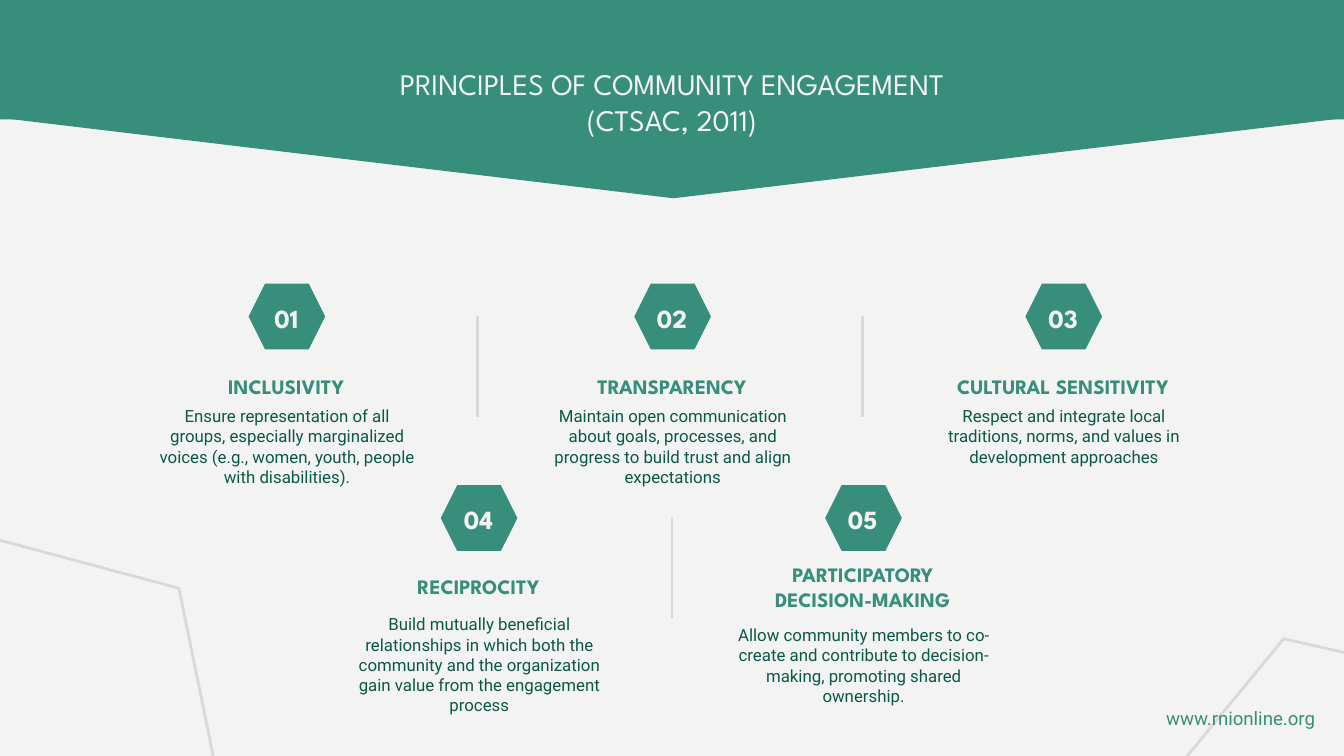
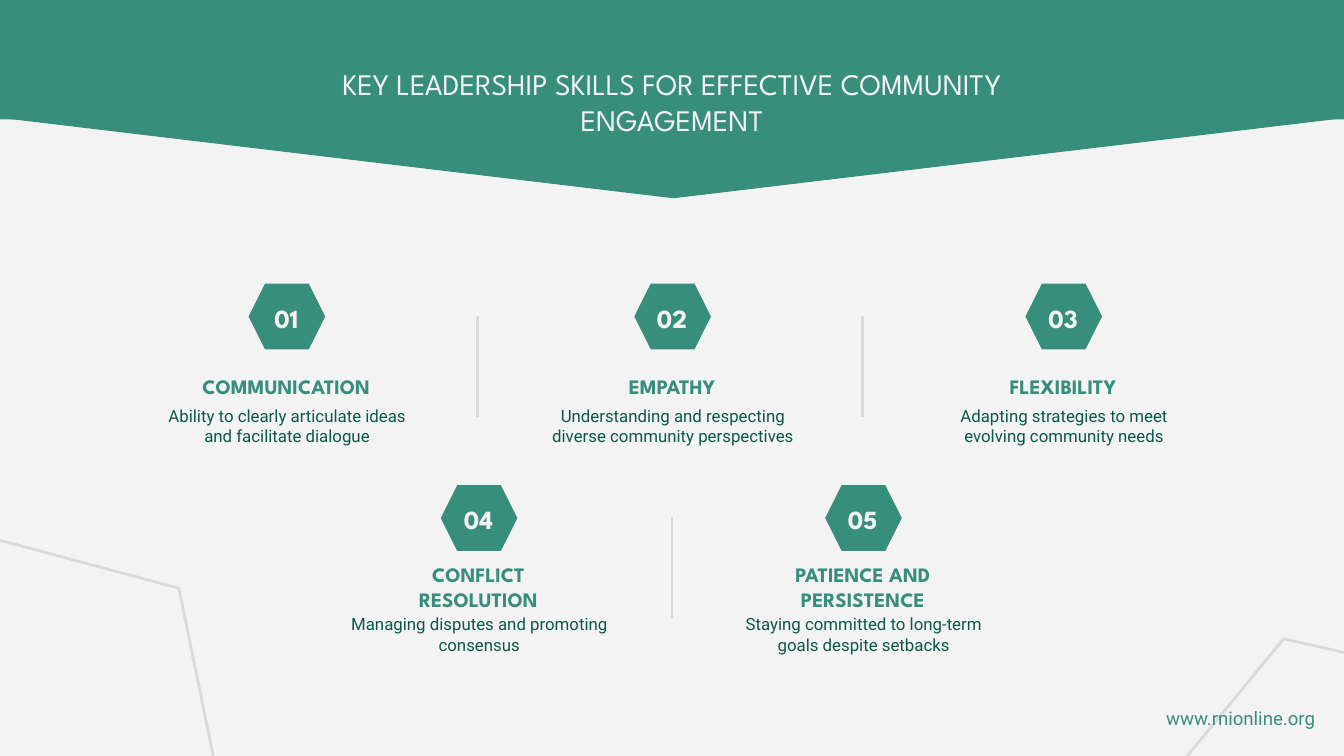
import lxml.etree
import pptx
import pptx.dml.color
import pptx.enum.shapes
import pptx.enum.text
import pptx.oxml.ns
import pptx.util

Inches = pptx.util.Inches
Shape = pptx.enum.shapes.MSO_SHAPE
Anchor = pptx.enum.text.MSO_ANCHOR

COLORS = {
    "green": "378E7B",
    "dark": "0B5848",
    "light": "F3F3F3",
    "grey": "D9D9D9",
}
DISPLAY, BODY = "League Spartan", "Roboto"

# Rows of hexagons: top, offset of heading and of description below it
ROW_1 = (2.11, 0.45, 0.81)
ROW_2 = (3.61, 0.44, 0.86)
# Each numbered item: centre, heading width, row
SLOTS = [
    (2.13, 1.75, ROW_1),
    (5.0, 1.75, ROW_1),
    (7.91, 2.0, ROW_1),
    (3.56, 1.75, ROW_2),
    (6.42, 1.75, ROW_2),
]
DIVIDERS = [(3.55, 2.35), (6.42, 2.35), (5.0, 3.85)]

SLIDES = [
    ("PRINCIPLES OF COMMUNITY ENGAGEMENT\n(CTSAC, 2011)", [
        ("INCLUSIVITY", "Ensure representation of all groups, especially marginalized "
         "voices (e.g., women, youth, people with disabilities)."),
        ("TRANSPARENCY", "Maintain open communication about goals, processes, and "
         "progress to build trust and align expectations"),
        ("CULTURAL SENSITIVITY", "Respect and integrate local traditions, norms, and "
         "values in development approaches"),
        ("RECIPROCITY", "Build mutually beneficial relationships in which both the "
         "community and the organization gain value from the engagement process"),
        ("PARTICIPATORY DECISION-MAKING", "Allow community members to co-create and "
         "contribute to decision-making, promoting shared ownership.", 0.08),
    ]),
    ("KEY LEADERSHIP SKILLS FOR EFFECTIVE COMMUNITY ENGAGEMENT", [
        ("COMMUNICATION", "Ability to clearly articulate ideas and facilitate dialogue"),
        ("EMPATHY", "Understanding and respecting diverse community perspectives"),
        ("FLEXIBILITY", "Adapting strategies to meet evolving community needs"),
        ("CONFLICT RESOLUTION", "Managing disputes and promoting consensus"),
        ("PATIENCE AND PERSISTENCE", "Staying committed to long-term goals despite setbacks"),
    ]),
]


def rgb(name):
    return pptx.dml.color.RGBColor.from_string(COLORS[name])


def write(tf, text, size=9, font=BODY, color="dark", bold=False, anchor=Anchor.TOP):
    """Fill a text frame with one centred paragraph; newlines become line breaks."""
    tf.word_wrap = True
    tf.auto_size = pptx.enum.text.MSO_AUTO_SIZE.NONE
    tf.vertical_anchor = anchor
    tf.margin_left = tf.margin_right = tf.margin_top = tf.margin_bottom = Inches(0.1)
    p = tf.paragraphs[0]
    p.alignment = pptx.enum.text.PP_ALIGN.CENTER
    for i, line in enumerate(text.split("\n")):
        if i:
            p.add_line_break()
        r = p.add_run()
        r.text = line
        r.font.size = pptx.util.Pt(size)
        r.font.name = font
        r.font.bold = bold
        r.font.color.rgb = rgb(color)


class Deck:
    def __init__(self):
        self.prs = pptx.Presentation()
        # 16:9
        self.prs.slide_width = Inches(10)
        self.prs.slide_height = Inches(10 * 9 / 16)
        fill = self.prs.slide_master.background.fill
        fill.solid()
        fill.fore_color.rgb = rgb("light")
        self.s = None

    def shape(self, kind, x, y, w, h, fill=None, line=None, width=1.5, rotation=0):
        sp = self.s.shapes.add_shape(kind, Inches(x), Inches(y), Inches(w), Inches(h))
        sp.shadow.inherit = False
        sp.rotation = rotation
        if fill:
            sp.fill.solid()
            sp.fill.fore_color.rgb = rgb(fill)
        else:
            sp.fill.background()
        if line:
            sp.line.color.rgb = rgb(line)
            sp.line.width = pptx.util.Pt(width)
        else:
            sp.line.fill.background()

    def text(self, text, x, y, w, h, **fmt):
        sp = self.s.shapes.add_textbox(Inches(x), Inches(y), Inches(w), Inches(h))
        write(sp.text_frame, text, **fmt)

    def divider(self, x, y, length=0.75):
        c = self.s.shapes.add_connector(
            pptx.enum.shapes.MSO_CONNECTOR.STRAIGHT,
            Inches(x), Inches(y), Inches(x), Inches(y + length))
        c.line.color.rgb = rgb("grey")
        c.line.width = pptx.util.Pt(1.5)
        lxml.etree.SubElement(c.element.spPr, pptx.oxml.ns.qn("a:effectLst"))

    def band(self):
        self.shape(Shape.ISOSCELES_TRIANGLE, -0.01, 0.87, 10.04, 0.6,
                   fill="green", line="green", width=0.75, rotation=180)
        self.shape(Shape.RECTANGLE, -0.01, -0.04, 10.04, 0.93, fill="green")

    def title(self, text):
        sp = self.s.shapes.title
        sp.left, sp.top = Inches(2.31), Inches(0.39)
        sp.width, sp.height = Inches(5.38), Inches(0.75)
        write(sp.text_frame, text, size=16, font=DISPLAY, color="light")
        # Bring the title in front of the band
        sp.element.getparent().append(sp.element)

    def item(self, number, slot, heading, description, drop=0):
        cx, width, (top, heading_dy, body_dy) = slot
        self.shape(Shape.HEXAGON, cx - 0.28, top, 0.57, 0.49, fill="green")
        self.text(f"{number:02}", cx - 0.41, top + 0.09, 0.82, 0.33, size=14,
                  font=DISPLAY, color="light", bold=True, anchor=Anchor.MIDDLE)
        self.text(heading, cx - width / 2, top + heading_dy, width, 0.63, size=11,
                  font=DISPLAY, color="green", bold=True, anchor=Anchor.MIDDLE)
        self.text(description, cx - 1.07, top + body_dy + drop, 2.15, 0.63)

    def footer(self):
        for x, y, rotation in [(-1.56, 4.08, 15), (8.29, 5.05, 309.4)]:
            self.shape(Shape.HEXAGON, x, y, 3.23, 2.53, line="grey", rotation=rotation)
        self.text("www.rnionline.org", 8.12, 5.16, 2.22, 0.38, size=10, color="green")

    def add_slide(self, title, items):
        self.s = self.prs.slides.add_slide(self.prs.slide_layouts[5])
        # Header
        self.band()
        self.title(title)
        # Numbered items
        for x, y in DIVIDERS:
            self.divider(x, y)
        for number, (slot, item) in enumerate(zip(SLOTS, items), 1):
            self.item(number, slot, *item)
        # Corner outlines and web address
        self.footer()


def main():
    deck = Deck()
    for title, items in SLIDES:
        deck.add_slide(title, items)
    deck.prs.save("out.pptx")


if __name__ == "__main__":
    main()
